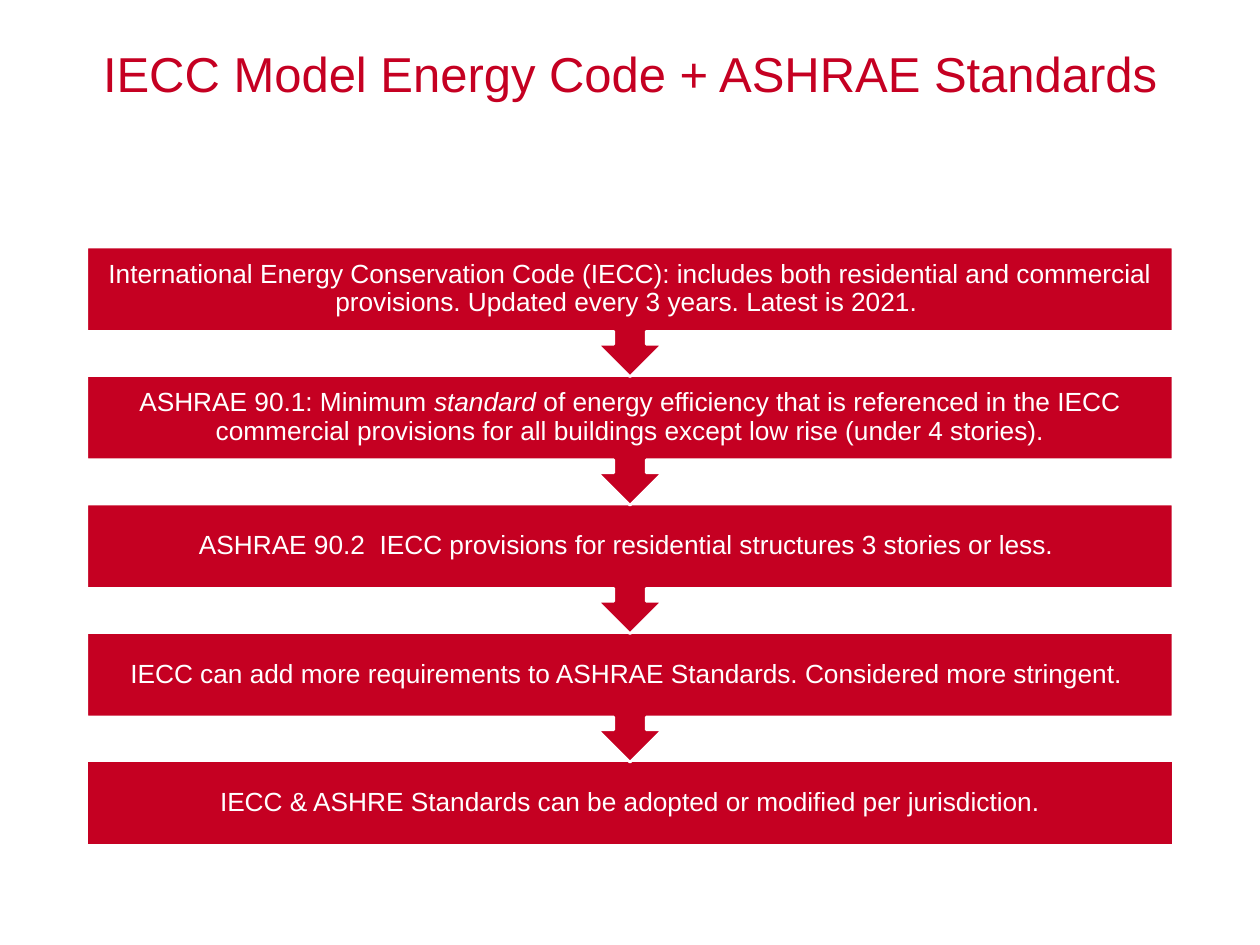
from dataclasses import dataclass

from pptx import Presentation
from pptx.dml.color import RGBColor
from pptx.enum.shapes import MSO_SHAPE
from pptx.enum.text import MSO_ANCHOR, PP_ALIGN
from pptx.util import Inches, Pt


@dataclass(frozen=True)
class Theme:
    font: str = "Arial"
    red: RGBColor = RGBColor(0xC5, 0x00, 0x22)
    white: RGBColor = RGBColor(0xFF, 0xFF, 0xFF)
    title_size: int = 28
    step_size: int = 15
    outline: float = 1.5


@dataclass(frozen=True)
class Run:
    text: str
    italic: bool = False


@dataclass(frozen=True)
class Step:
    runs: tuple[Run, ...]


THEME = Theme()
LEFT, WIDTH = 0.69, 8.62
FIRST_TOP, PITCH = 1.96, 1.02
BAR_HEIGHT, CALLOUT_HEIGHT = 0.67, 1.03

STEPS = (
    Step((Run("International Energy Conservation Code (IECC): includes both residential "
              "and commercial provisions. Updated every 3 years. Latest is 2021. "),)),
    Step((Run("ASHRAE 90.1: Minimum "),
          Run("standard", italic=True),
          Run(" of energy efficiency that is referenced in the IECC commercial "
              "provisions for all buildings except low rise (under 4 stories)."))),
    Step((Run("ASHRAE 90.2  IECC provisions for residential structures 3 stories or less. "),)),
    Step((Run("IECC can add more requirements to ASHRAE Standards. "
              "Considered more stringent. "),)),
    Step((Run("IECC & ASHRE Standards can be adopted or modified per jurisdiction."),)),
)


def add_text(slide, runs: tuple[Run, ...], *, top: float, height: float, size: int,
             color: RGBColor, inset: float = 0, anchor=MSO_ANCHOR.TOP) -> None:
    box = slide.shapes.add_textbox(Inches(LEFT), Inches(top), Inches(WIDTH), Inches(height))
    frame = box.text_frame
    frame.word_wrap = True
    frame.vertical_anchor = anchor
    frame.margin_left = frame.margin_right = Inches(inset)
    frame.margin_top = frame.margin_bottom = Inches(inset)
    paragraph = frame.paragraphs[0]
    paragraph.alignment = PP_ALIGN.CENTER
    paragraph.line_spacing = 0.9
    for part in runs:
        run = paragraph.add_run()
        run.text = part.text
        run.font.name = THEME.font
        run.font.size = Pt(size)
        run.font.italic = part.italic
        run.font.color.rgb = color


def add_step(slide, step: Step, top: float, is_last: bool) -> None:
    preset = MSO_SHAPE.RECTANGLE if is_last else MSO_SHAPE.UP_ARROW_CALLOUT
    height = BAR_HEIGHT if is_last else CALLOUT_HEIGHT
    bar = slide.shapes.add_shape(preset, Inches(LEFT), Inches(top),
                                 Inches(WIDTH), Inches(height))
    bar.rotation = 0 if is_last else 180
    bar.shadow.inherit = False
    bar.fill.solid()
    bar.fill.fore_color.rgb = THEME.red
    bar.line.color.rgb = THEME.white
    bar.line.width = Pt(THEME.outline)
    add_text(slide, step.runs, top=top, height=BAR_HEIGHT, size=THEME.step_size,
             color=THEME.white, inset=0.12, anchor=MSO_ANCHOR.MIDDLE)


def main() -> None:
    deck = Presentation()
    deck.slide_width, deck.slide_height = Inches(10), Inches(7.5)
    slide = deck.slides.add_slide(deck.slide_layouts[6])
    add_text(slide, (Run("IECC Model Energy Code + ASHRAE Standards"),),
             top=0.4, height=1.45, size=THEME.title_size, color=THEME.red)
    last = len(STEPS) - 1
    for index in range(last, -1, -1):
        add_step(slide, STEPS[index], FIRST_TOP + index * PITCH, index == last)
    deck.save("out.pptx")


if __name__ == "__main__":
    main()
